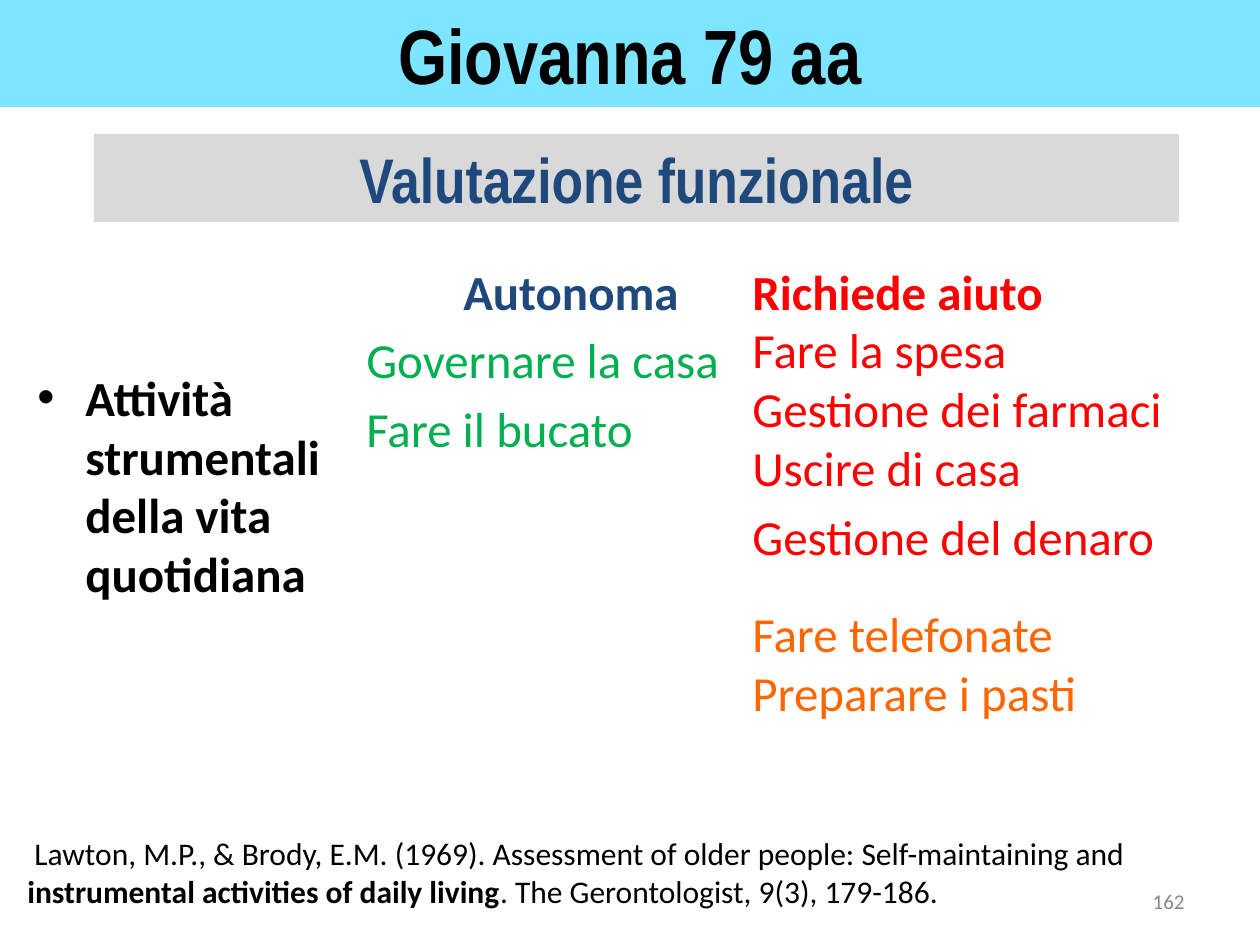
"""Build the functional assessment slide for Giovanna, 79 years old."""
from dataclasses import dataclass

from lxml.etree import SubElement
from pptx import Presentation
from pptx.dml.color import RGBColor
from pptx.enum.shapes import MSO_SHAPE as Shape
from pptx.enum.text import MSO_ANCHOR as Anchor, PP_ALIGN as Align
from pptx.oxml.ns import qn
from pptx.util import Emu, Pt

PX_PER_INCH = 126
BLACK = RGBColor(0x00, 0x00, 0x00)
CYAN = RGBColor(0x00, 0xCC, 0xFF)
LIGHT_GRAY = RGBColor(0xD9, 0xD9, 0xD9)
GRAY = RGBColor(0x89, 0x89, 0x89)
NAVY = RGBColor(0x1F, 0x49, 0x7D)
GREEN = RGBColor(0x00, 0xB0, 0x50)
RED = RGBColor(0xFF, 0x00, 0x00)
ORANGE = RGBColor(0xFF, 0x66, 0x00)
BODY_FONT = "Calibri"
HEADING_FONT = "Arial Narrow"
HANGING = 48
SPACE_WIDTH = 11
LIST_GAP = 5.6
GROUP_GAP = 22


@dataclass(frozen=True)
class Area:
    left: int
    top: int
    width: int
    height: int


@dataclass(frozen=True)
class Line:
    text: str
    color: RGBColor = BLACK
    bold: bool = False
    size: int = 28
    font: str = BODY_FONT
    align: Align = Align.LEFT
    before: float = 0
    margin: int = 0
    indent: int = 0
    bullet: str = ""
    bold_part: str = ""


@dataclass(frozen=True)
class TextBlock:
    area: Area
    lines: tuple[Line, ...]
    anchor: Anchor = Anchor.TOP


@dataclass(frozen=True)
class Banner:
    area: Area
    line: Line
    fill: RGBColor
    opacity: int = 100


BANNERS = (
    Banner(Area(0, 0, 1260, 107),
           Line("Giovanna 79 aa", BLACK, True, 44, HEADING_FONT, Align.CENTER), CYAN, 51),
    Banner(Area(94, 134, 1085, 88),
           Line("Valutazione funzionale", NAVY, True, 36, HEADING_FONT, Align.CENTER), LIGHT_GRAY),
)
TEXT_BLOCKS = (
    TextBlock(Area(25, 361, 328, 487), (
        Line("Attività strumentali della vita quotidiana", bold=True,
             margin=HANGING, indent=-HANGING, bullet="•"),
    )),
    TextBlock(Area(343, 255, 456, 624), (
        Line("Autonoma", NAVY, True, align=Align.CENTER, margin=HANGING, indent=-HANGING),
        Line("Governare la casa", GREEN, before=LIST_GAP, margin=SPACE_WIDTH),
        Line("Fare il bucato", GREEN, before=LIST_GAP, margin=SPACE_WIDTH),
    )),
    TextBlock(Area(740, 255, 496, 554), (
        Line("Richiede aiuto", RED, True),
        Line("Fare la spesa", RED),
        Line("Gestione dei farmaci", RED),
        Line("Uscire di casa", RED),
        Line("Gestione del denaro", RED, before=LIST_GAP),
        Line("Fare telefonate", ORANGE, before=GROUP_GAP),
        Line("Preparare i pasti", ORANGE),
    )),
    TextBlock(Area(15, 828, 1245, 89), (
        Line("Lawton, M.P., & Brody, E.M. (1969). Assessment of older people: "
             "Self-maintaining and instrumental activities of daily living. "
             "The Gerontologist, 9(3), 179-186.", size=18, indent=7,
             bold_part="instrumental activities of daily living"),
    )),
    TextBlock(Area(903, 876, 294, 50),
              (Line("162", GRAY, size=12, align=Align.RIGHT),), Anchor.MIDDLE),
)


def px(length: int) -> Emu:
    """Turn px into EMU."""
    return Emu(round(length * 914400 / PX_PER_INCH))


def place(area: Area) -> tuple[Emu, Emu, Emu, Emu]:
    """Give an area in EMU."""
    return px(area.left), px(area.top), px(area.width), px(area.height)


def write_line(para, line: Line) -> None:
    """Fill one paragraph with its text and format."""
    properties = para._p.get_or_add_pPr()
    properties.set("marL", str(px(line.margin)))
    properties.set("indent", str(px(line.indent)))
    if line.bullet:
        SubElement(properties, qn("a:buFont")).set("typeface", "Arial")
        SubElement(properties, qn("a:buChar")).set("char", line.bullet)
    para.alignment = line.align
    para.space_before = Pt(line.before)
    para.font.name = line.font
    para.font.size = Pt(line.size)
    para.font.color.rgb = line.color
    if line.bold_part:
        start, end = line.text.split(line.bold_part)
        for text, bold in ((start, False), (line.bold_part, True), (end, False)):
            span = para.add_run()
            span.text = text
            span.font.bold = bold
    else:
        para.font.bold = line.bold
        para.add_run().text = line.text


def write_lines(frame, lines: tuple[Line, ...], anchor: Anchor) -> None:
    """Write lines into a wrapped text frame."""
    frame.word_wrap = True
    frame.vertical_anchor = anchor
    for index, line in enumerate(lines):
        write_line(frame.add_paragraph() if index else frame.paragraphs[0], line)


def draw_banner(page, banner: Banner) -> None:
    """Draw a filled heading bar."""
    box = page.shapes.add_shape(Shape.RECTANGLE, *place(banner.area))
    box.shadow.inherit = False
    box.line.fill.background()
    box.fill.solid()
    box.fill.fore_color.rgb = banner.fill
    if banner.opacity < 100:
        color = box._element.spPr.find(qn("a:solidFill"))[0]
        SubElement(color, qn("a:alpha")).set("val", str(banner.opacity * 1000))
    write_lines(box.text_frame, (banner.line,), Anchor.MIDDLE)


def draw_text(page, block: TextBlock) -> None:
    """Draw a text box."""
    box = page.shapes.add_textbox(*place(block.area))
    write_lines(box.text_frame, block.lines, block.anchor)


def main() -> None:
    """Build and save the deck."""
    deck = Presentation()
    deck.slide_width, deck.slide_height = px(1260), px(945)
    page = deck.slides.add_slide(deck.slide_layouts[6])
    for banner in BANNERS:
        draw_banner(page, banner)
    for block in TEXT_BLOCKS:
        draw_text(page, block)
    deck.save("out.pptx")


if __name__ == "__main__":
    main()
